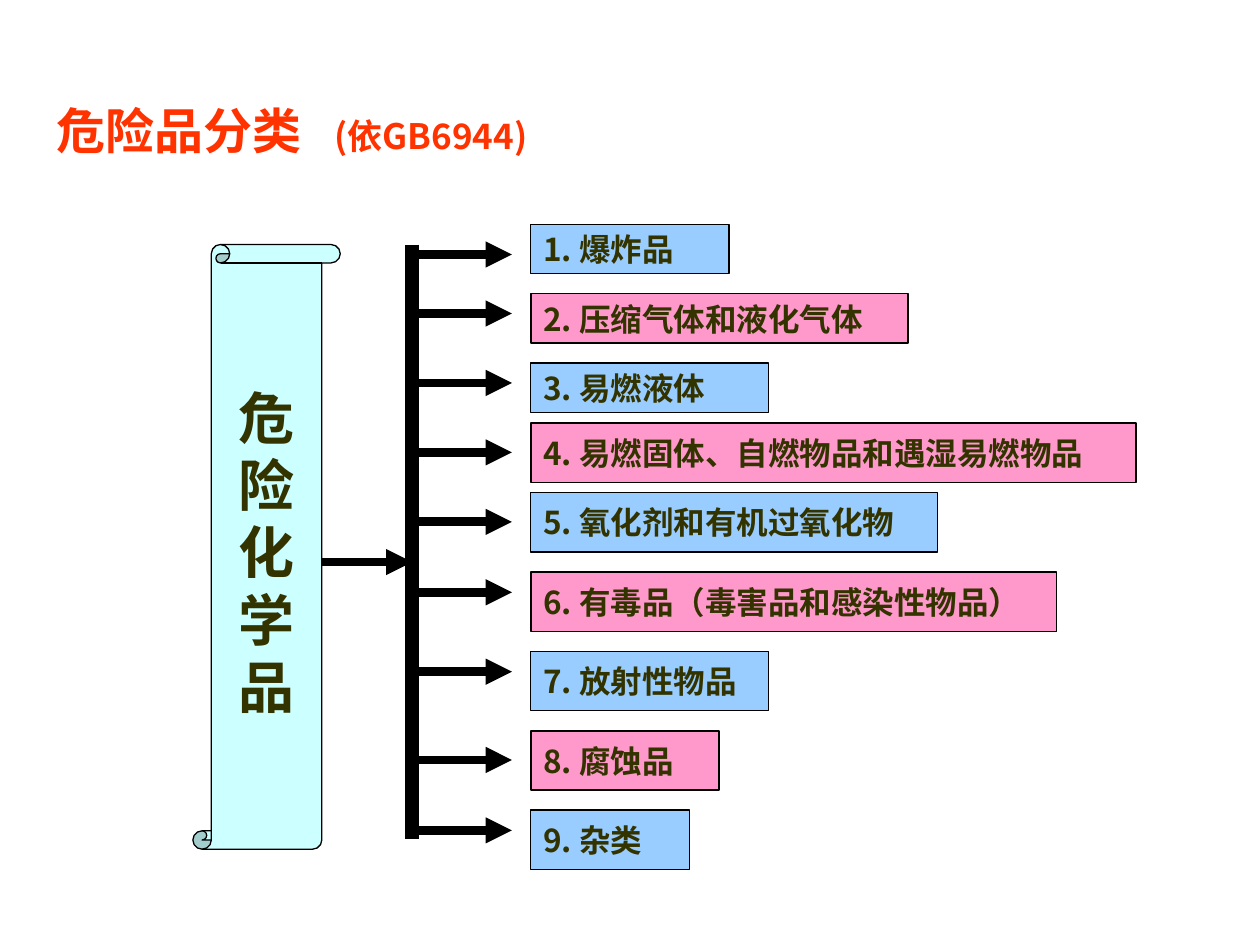
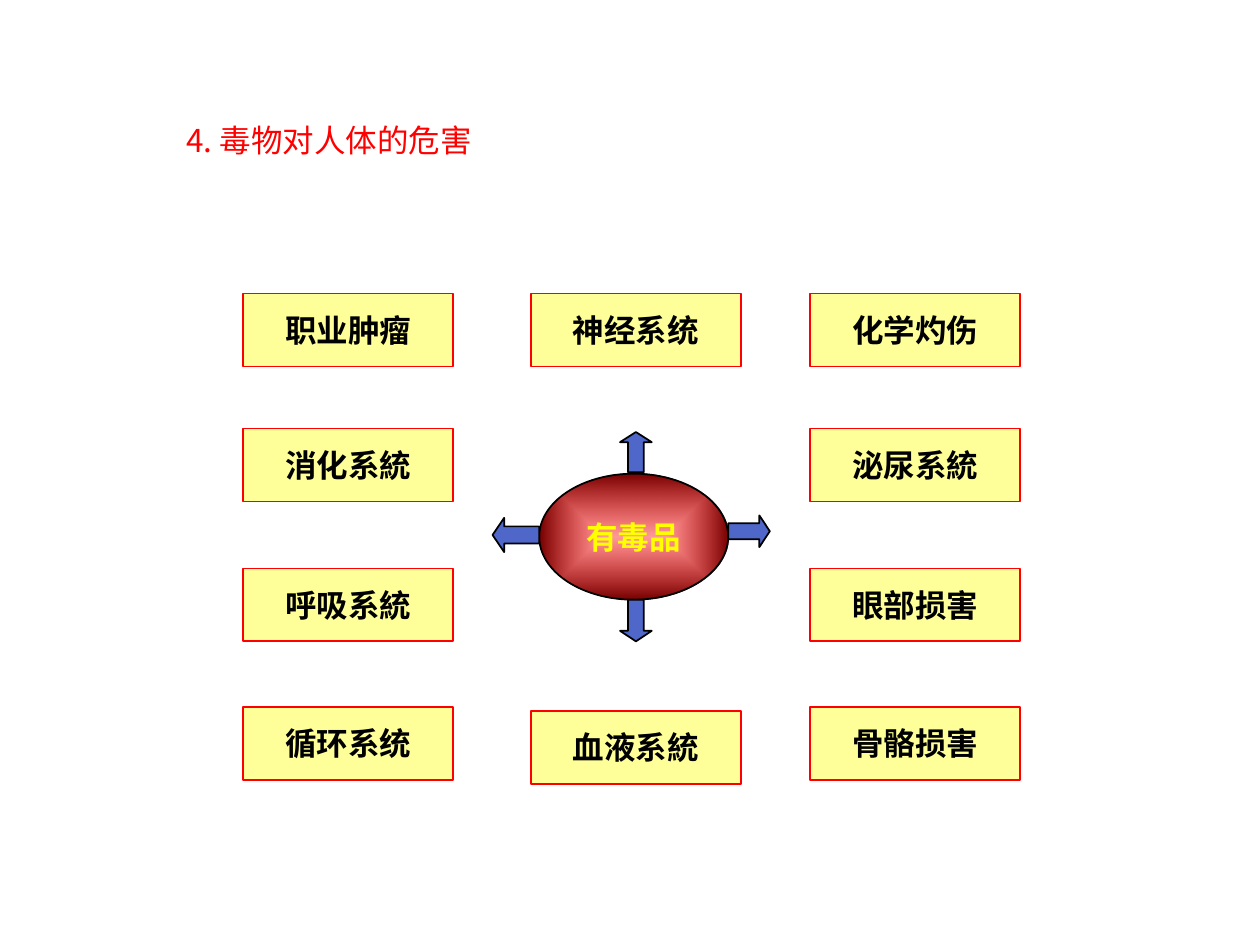
from dataclasses import dataclass

from lxml import etree
from pptx import Presentation
from pptx.dml.color import RGBColor
from pptx.enum.shapes import MSO_CONNECTOR, MSO_SHAPE
from pptx.enum.text import MSO_ANCHOR, MSO_AUTO_SIZE, PP_ALIGN
from pptx.oxml import parse_xml
from pptx.oxml.ns import nsdecls, qn
from pptx.shapes.autoshape import Shape
from pptx.slide import Slide
from pptx.text.text import TextFrame, _Paragraph
from pptx.util import Cm, Pt

RECT, OVAL, SCROLL = MSO_SHAPE.RECTANGLE, MSO_SHAPE.OVAL, MSO_SHAPE.VERTICAL_SCROLL
RIGHT, LEFT = MSO_SHAPE.RIGHT_ARROW, MSO_SHAPE.LEFT_ARROW
UP, DOWN = MSO_SHAPE.UP_ARROW, MSO_SHAPE.DOWN_ARROW
STRAIGHT = MSO_CONNECTOR.STRAIGHT
ALIGN_LEFT, ALIGN_CENTER = PP_ALIGN.LEFT, PP_ALIGN.CENTER
MIDDLE, BOTTOM = MSO_ANCHOR.MIDDLE, MSO_ANCHOR.BOTTOM
FIT_SHAPE = MSO_AUTO_SIZE.SHAPE_TO_FIT_TEXT

FONT = "Noto Sans CJK SC"
BLACK, RED, ORANGE_RED, YELLOW = "000000", "FF0000", "FF3300", "FFFF00"
OLIVE, SKY, PINK, AQUA = "333300", "99CCFF", "FF99CC", "CCFFFF"
CREAM, INDIGO, MAROON = "FFFF99", "4E67C8", "760000"


@dataclass(frozen=True)
class Area:
    left: float
    top: float
    width: float
    height: float

    def lengths(self) -> tuple[Cm, Cm, Cm, Cm]:
        return Cm(self.left), Cm(self.top), Cm(self.width), Cm(self.height)


@dataclass(frozen=True)
class TextStyle:
    size: float
    color: str
    bold: bool = True
    align: PP_ALIGN = ALIGN_CENTER


@dataclass(frozen=True)
class HazardClass:
    name: str
    top: float
    width: float
    height: float
    arrow_y: float


@dataclass(frozen=True)
class Direction:
    preset: MSO_SHAPE
    area: Area
    head: float


CLASS_STYLE = TextStyle(18, OLIVE, align=ALIGN_LEFT)
SCROLL_STYLE = TextStyle(32, OLIVE)
HARM_STYLE = TextStyle(18, BLACK)
TOXIC_STYLE = TextStyle(18, YELLOW)

CLASS_LEFT = 10.7
SPINE_X, SPINE_TOP, SPINE_BOTTOM = 8.31, 4.93, 16.92
ARROW_END = 10.32
HAZARD_CLASSES = (
    HazardClass("爆炸品", 4.52, 4, 1, 5.13),
    HazardClass("压缩气体和液化气体", 5.92, 7.6, 1, 6.32),
    HazardClass("易燃液体", 7.32, 4.8, 1, 7.72),
    HazardClass("易燃固体、自燃物品和遇湿易燃物品", 8.53, 12.2, 1.2, 9.12),
    HazardClass("氧化剂和有机过氧化物", 9.93, 8.2, 1.2, 10.52),
    HazardClass("有毒品（毒害品和感染性物品）", 11.53, 10.6, 1.2, 11.94),
    HazardClass("放射性物品", 13.13, 4.8, 1.2, 13.54),
    HazardClass("腐蚀品", 14.73, 3.8, 1.2, 15.32),
    HazardClass("杂类", 16.33, 3.2, 1.2, 16.74),
)

SIDE_ROWS = (5.92, 8.64, 11.46, 14.25)
HARM_COLUMNS = (
    (4.9, SIDE_ROWS, ("职业肿瘤", "消化系統", "呼吸系統", "循环系统")),
    (10.7, (5.92, 14.33), ("神经系统", "血液系統")),
    (16.33, SIDE_ROWS, ("化学灼伤", "泌尿系統", "眼部损害", "骨骼损害")),
)
DIRECTIONS = (
    Direction(RIGHT, Area(14.68, 10.39, 0.84, 0.64), 0.33),
    Direction(UP, Area(12.5, 8.71, 0.64, 0.81), 0.32),
    Direction(DOWN, Area(12.5, 12.09, 0.64, 0.84), 0.33),
    Direction(LEFT, Area(9.93, 10.44, 0.94, 0.69), 0.34),
)


def rgb(value: str) -> RGBColor:
    return RGBColor.from_string(value)


def style_paragraph(paragraph: _Paragraph, style: TextStyle) -> None:
    paragraph.alignment = style.align
    font = paragraph.font
    font.name, font.size, font.bold = FONT, Pt(style.size), style.bold
    font.color.rgb = rgb(style.color)
    defaults = paragraph._p.get_or_add_pPr().find(qn("a:defRPr"))
    etree.SubElement(defaults, qn("a:ea")).set("typeface", FONT)


def write_lines(frame: TextFrame, text: str, style: TextStyle) -> None:
    frame.text = text
    for paragraph in frame.paragraphs:
        style_paragraph(paragraph, style)


def add_outlined(slide: Slide, preset: MSO_SHAPE, area: Area, fill: str,
                 line: str = BLACK, weight: float = 1) -> Shape:
    shape = slide.shapes.add_shape(preset, *area.lengths())
    shape.shadow.inherit = False
    shape.fill.solid()
    shape.fill.fore_color.rgb = rgb(fill)
    shape.line.color.rgb = rgb(line)
    shape.line.width = Pt(weight)
    return shape


def add_label(slide: Slide, preset: MSO_SHAPE, area: Area, text: str, style: TextStyle,
              fill: str, line: str = BLACK, weight: float = 1) -> Shape:
    shape = add_outlined(slide, preset, area, fill, line, weight)
    shape.text_frame.vertical_anchor = MIDDLE
    shape.text_frame.word_wrap = True
    write_lines(shape.text_frame, text, style)
    return shape


def add_line(slide: Slide, start: tuple[float, float], end: tuple[float, float],
             weight: float, arrow: bool = True) -> None:
    connector = slide.shapes.add_connector(STRAIGHT, *map(Cm, start + end))
    connector.line.color.rgb = rgb(BLACK)
    connector.line.width = Pt(weight)
    properties = connector._element.spPr
    if arrow:
        etree.SubElement(properties.find(qn("a:ln")), qn("a:tailEnd")).set("type", "triangle")
    etree.SubElement(properties, qn("a:effectLst"))


def add_title(slide: Slide, area: Area, text: str, style: TextStyle) -> TextFrame:
    frame = slide.shapes.add_textbox(*area.lengths()).text_frame
    write_lines(frame, text, style)
    return frame


def shade_from_center(shape: Shape, inner: str, outer: str) -> None:
    gradient = parse_xml(
        f'<a:gradFill {nsdecls("a")} rotWithShape="1"><a:gsLst>'
        f'<a:gs pos="0"><a:srgbClr val="{inner}"><a:alpha val="40000"/></a:srgbClr></a:gs>'
        f'<a:gs pos="100000"><a:srgbClr val="{outer}"/></a:gs></a:gsLst>'
        '<a:path path="shape"><a:fillToRect l="50000" t="50000" r="50000" b="50000"/></a:path>'
        "</a:gradFill>"
    )
    properties = shape._element.spPr
    properties.replace(properties.find(qn("a:solidFill")), gradient)


def build_classification(slide: Slide) -> None:
    title = add_title(slide, Area(0.89, 2.31, 20.8, 1.04), "危险品分类",
                      TextStyle(28, ORANGE_RED, align=ALIGN_LEFT))
    title.word_wrap = True
    title.vertical_anchor = BOTTOM
    heading = title.paragraphs[0]
    heading.line_spacing = 0.85
    tabs = parse_xml(f'<a:tabLst {nsdecls("a")}><a:tab pos="{Cm(5.6)}" algn="l"/></a:tabLst>')
    heading._p.pPr.find(qn("a:defRPr")).addprevious(tabs)
    standard = heading.add_run()
    standard.text = "\t(依GB6944)"
    standard.font.size = Pt(20)

    add_label(slide, SCROLL, Area(3.89, 4.93, 2.97, 12.19), "\n".join("危险化学品"),
              SCROLL_STYLE, AQUA, weight=0.75)
    add_line(slide, (SPINE_X, SPINE_TOP), (SPINE_X, SPINE_BOTTOM), 8, arrow=False)
    add_line(slide, (6.5, 11.33), (SPINE_X, 11.33), 5)
    for number, hazard in enumerate(HAZARD_CLASSES, 1):
        fill, weight = (SKY, 0.75) if number % 2 else (PINK, 1)
        area = Area(CLASS_LEFT, hazard.top, hazard.width, hazard.height)
        add_label(slide, RECT, area, f"{number}. {hazard.name}", CLASS_STYLE, fill, weight=weight)
        add_line(slide, (SPINE_X, hazard.arrow_y), (ARROW_END, hazard.arrow_y), 5)


def build_harms(slide: Slide) -> None:
    title = add_title(slide, Area(3.51, 2.31, 6.6, 1.02), "4. 毒物对人体的危害",
                      TextStyle(18, RED, bold=False, align=ALIGN_LEFT))
    title.word_wrap = False
    title.auto_size = FIT_SHAPE

    for left, tops, harms in HARM_COLUMNS:
        for top, harm in zip(tops, harms):
            add_label(slide, RECT, Area(left, top, 4.24, 1.47), harm, HARM_STYLE, CREAM, RED)
    toxic = add_label(slide, OVAL, Area(10.87, 9.55, 3.81, 2.54), "有毒品", TOXIC_STYLE, MAROON)
    shade_from_center(toxic, RED, MAROON)
    for direction in DIRECTIONS:
        arrow = add_outlined(slide, direction.preset, direction.area, INDIGO)
        arrow.adjustments[0] = 0.5
        arrow.adjustments[1] = direction.head


def main() -> None:
    deck = Presentation()
    deck.slide_width, deck.slide_height = Cm(25.4), Cm(19.05)
    blank = deck.slide_layouts[6]
    for build in (build_classification, build_harms):
        build(deck.slides.add_slide(blank))
    deck.save("out.pptx")


if __name__ == "__main__":
    main()
